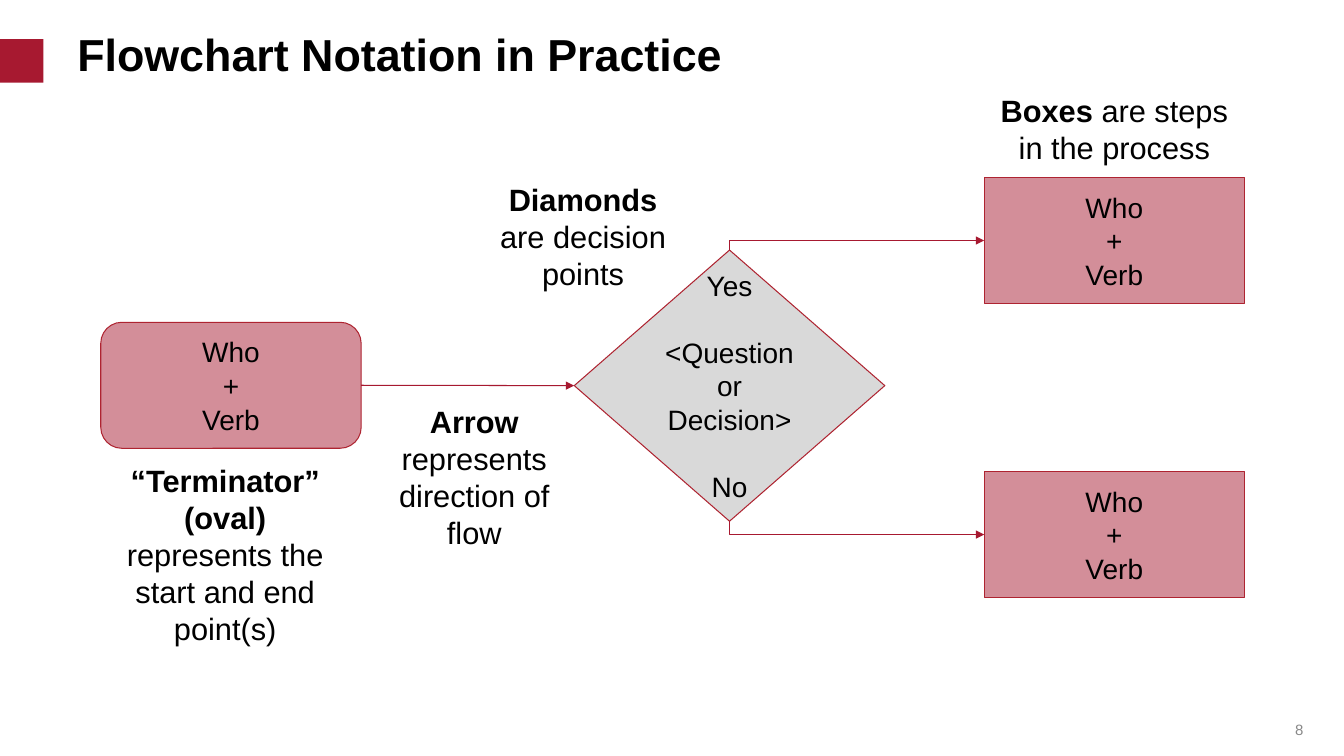
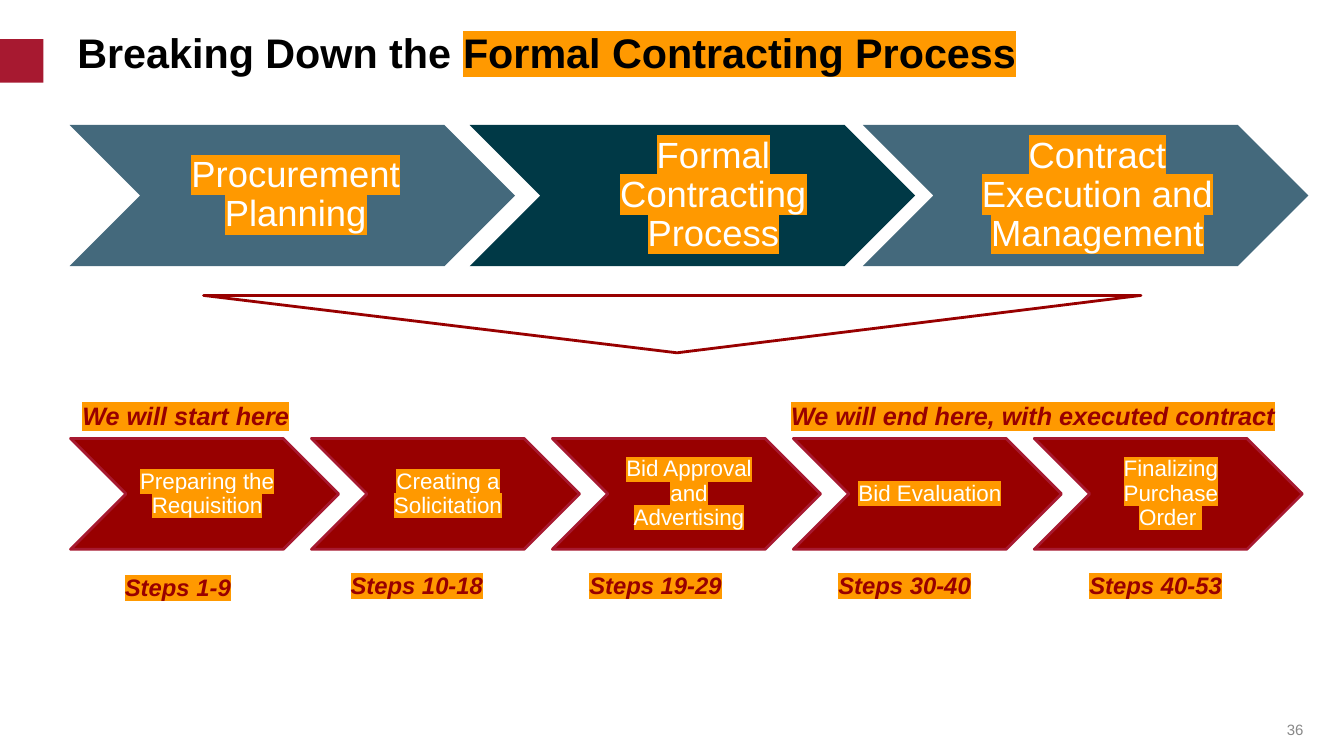
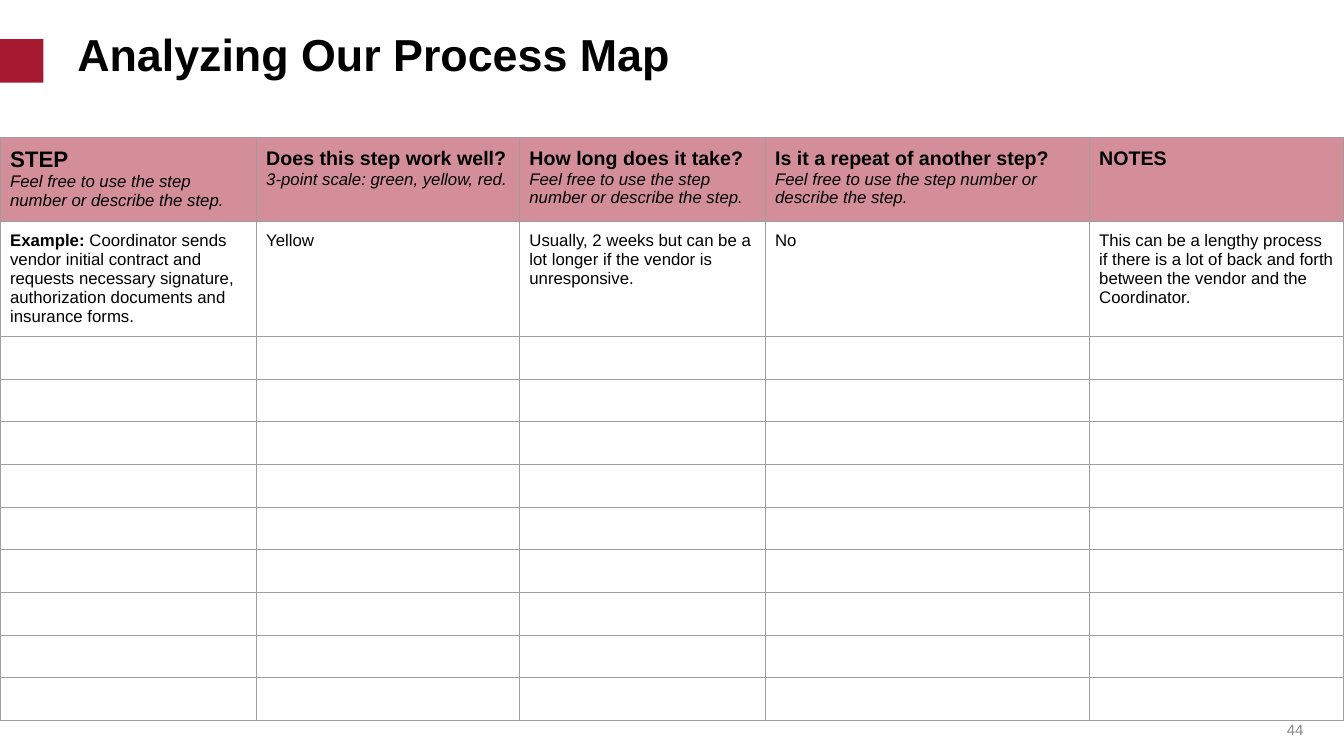
from lxml import etree
from pptx import Presentation
from pptx.dml.color import RGBColor
from pptx.enum.shapes import MSO_CONNECTOR as CONN, MSO_SHAPE as SHAPE
from pptx.enum.text import MSO_ANCHOR as ANCHOR, MSO_AUTO_SIZE as AUTO, PP_ALIGN as ALIGN
from pptx.oxml.ns import qn
from pptx.util import Pt

FONT = "Arial"
COLORS = {
    "crimson": "A71930", "outline": "AE2431", "maroon": "980000",
    "slate": "44697C", "teal": "003946", "orange": "FF9900",
    "gray": "D9D9D9", "grid": "9E9E9E", "number": "888888",
    "black": "000000", "white": "FFFFFF",
}
TINT = 49  # opacity of the pale crimson fills, in percent
LEFT_SITE, RIGHT_SITE, TOP_SITE, BOTTOM_SITE = 1, 3, 0, 2


# ---- text ----
def rgb(name):
    return RGBColor.from_string(COLORS[name])


def highlight(r, color):
    hl = etree.Element(qn("a:highlight"))
    etree.SubElement(hl, qn("a:srgbClr"), val=COLORS[color])
    r.font._element.find(qn("a:latin")).addprevious(hl)


def add_run(p, text, size, color="black", bold=False, italic=False, mark=None):
    r = p.add_run()
    r.text = text
    r.font.size = Pt(size)
    r.font.bold, r.font.italic = bold, italic
    r.font.color.rgb = rgb(color)
    r.font.name = FONT
    if mark:
        highlight(r, mark)


def add_paragraphs(tf, paragraphs, align=ALIGN.LEFT, spacing=None, gap=0, **style):
    """Each paragraph is a list of (text, style changes) runs."""
    for i, runs in enumerate(paragraphs):
        p = tf.paragraphs[0] if i == 0 else tf.add_paragraph()
        p.alignment = align
        if spacing:
            p.line_spacing = spacing
        if gap and i:
            p.space_before = Pt(gap)
        for text, changes in runs:
            add_run(p, text, **{**style, **changes})


def set_margins(target, left, top, right, bottom):
    target.margin_left, target.margin_top = Pt(left), Pt(top)
    target.margin_right, target.margin_bottom = Pt(right), Pt(bottom)


def add_text(slide, box, paragraphs, anchor=ANCHOR.TOP, **style):
    tf = slide.shapes.add_textbox(*map(Pt, box)).text_frame
    tf.word_wrap = True
    tf.vertical_anchor = anchor
    add_paragraphs(tf, paragraphs, **style)
    return tf


# ---- shapes ----
def set_opacity(props, percent):
    clr = props.find(qn("a:solidFill")).find(qn("a:srgbClr"))
    etree.SubElement(clr, qn("a:alpha"), val=str(percent * 1000))


def add_shape(slide, kind, box, fill, line=None, weight=0.75, opacity=None):
    sp = slide.shapes.add_shape(kind, *map(Pt, box))
    sp.shadow.inherit = False
    sp.fill.solid()
    sp.fill.fore_color.rgb = rgb(fill)
    if opacity:
        set_opacity(sp.element.spPr, opacity)
    if line:
        sp.line.color.rgb = rgb(line)
        sp.line.width = Pt(weight)
    else:
        sp.line.fill.background()
    sp.text_frame.word_wrap = True
    sp.text_frame.vertical_anchor = ANCHOR.MIDDLE
    return sp


def add_step(slide, kind, x, y):
    sp = add_shape(slide, kind, (x, y, 186, 90), "crimson", "outline", opacity=TINT)
    add_paragraphs(sp.text_frame, [[(t, {})] for t in ("Who", "+", "Verb")],
                   align=ALIGN.CENTER, size=20)
    return sp


def add_chevron(slide, box, fill, text, size, left, line=None):
    sp = add_shape(slide, SHAPE.CHEVRON, box, fill, line, 2)
    set_margins(sp.text_frame, left, 2, 0, 2)
    add_paragraphs(sp.text_frame, [[(text, {})]], align=ALIGN.CENTER, spacing=0.9,
                   size=size, color="white", mark="orange")


def add_arrow(slide, start, start_site, end, end_site, bent=False):
    kind = CONN.ELBOW if bent else CONN.STRAIGHT
    c = slide.shapes.add_connector(kind, 0, 0, 0, 0)
    c.begin_connect(start, start_site)
    c.end_connect(end, end_site)
    if bent:
        turn_corner(c)
    c.line.color.rgb = rgb("crimson")
    c.line.width = Pt(0.75)
    etree.SubElement(c.line._get_or_add_ln(), qn("a:tailEnd"), type="triangle")
    etree.SubElement(c.element.spPr, qn("a:effectLst"))


def turn_corner(c):
    """One-corner connector that leaves vertically: its frame is turned by 270 degrees."""
    dx, dy = c.end_x - c.begin_x, c.end_y - c.begin_y
    mid_x, mid_y = c.begin_x + dx // 2, c.begin_y + dy // 2
    c.begin_x, c.end_x = mid_x + dy // 2, mid_x - dy // 2
    c.begin_y, c.end_y = mid_y - dx // 2, mid_y + dx // 2
    props = c.element.spPr
    props.find(qn("a:xfrm")).set("rot", str(270 * 60000))
    props.find(qn("a:prstGeom")).set("prst", "bentConnector2")


# ---- table ----
def format_cell(cell, fill, opacity=None, top=7.2):
    set_margins(cell, 7.2, top, 7.2, 2)
    cell.fill.solid()
    cell.fill.fore_color.rgb = rgb(fill)
    props = cell._tc.get_or_add_tcPr()
    if opacity:
        set_opacity(props, opacity)
    for i, side in enumerate("LRTB"):
        ln = etree.Element(qn(f"a:ln{side}"), w=str(Pt(0.75)))
        line_fill = etree.SubElement(ln, qn("a:solidFill"))
        etree.SubElement(line_fill, qn("a:srgbClr"), val=COLORS["grid"])
        props.insert(i, ln)


# ---- shared slide parts ----
def set_up_layout(prs):
    layout = prs.slide_layouts[5]
    title = layout.placeholders[0]
    title.left, title.top, title.width, title.height = map(Pt, (48, 19.4, 864, 42.5))
    tf = title.text_frame
    set_margins(tf, 7.2, 0, 7.2, 3.6)
    tf.vertical_anchor = ANCHOR.TOP
    tf.auto_size = AUTO.NONE
    return layout


def move_to_layout(sp, layout):
    layout.shapes.element.append(sp.element)


def new_slide(prs, layout, title, size=32):
    slide = prs.slides.add_slide(layout)
    add_paragraphs(slide.shapes.title.text_frame, [title], size=size, bold=True)
    return slide


def add_number(slide, number):
    tf = add_text(slide, (882, 506.2, 54, 28.8), [[(str(number), {})]], ANCHOR.MIDDLE,
                  align=ALIGN.RIGHT, size=10.7, color="number")
    set_margins(tf, 5, 3.6, 5, 2.2)


# ---- slides ----
def build_flowchart(slide):
    diamond = add_shape(slide, SHAPE.DIAMOND, (410.2, 178.6, 221.8, 193.7), "gray", "outline")
    add_paragraphs(diamond.text_frame,
                   [[(t, {})] for t in ("Yes", "<Question or Decision>", "No")],
                   align=ALIGN.CENTER, gap=24, size=20)
    yes_step = add_step(slide, SHAPE.RECTANGLE, 703, 126.8)
    no_step = add_step(slide, SHAPE.RECTANGLE, 703, 336.8)
    terminator = add_step(slide, SHAPE.ROUNDED_RECTANGLE, 72, 230.2)

    add_arrow(slide, terminator, RIGHT_SITE, diamond, LEFT_SITE)
    add_arrow(slide, diamond, TOP_SITE, yes_step, LEFT_SITE, bent=True)
    add_arrow(slide, diamond, BOTTOM_SITE, no_step, LEFT_SITE, bent=True)

    bold = {"bold": True}
    captions = [
        ((75.6, 326.2, 170.6, 140.4), [[("“Terminator” (oval)", bold)],
                                       [("represents the start and end point(s)", {})]]),
        ((345.6, 125.3, 141.8, 87.1), [[("Diamonds ", bold), ("are decision points", {})]]),
        ((703, 62, 186, 60.5), [[("Boxes ", bold), ("are steps in the process", {})]]),
        ((272.9, 284.4, 131.8, 113.8), [[("Arrow", bold)],
                                        [("represents direction of flow", {})]]),
    ]
    for box, paragraphs in captions:
        add_text(slide, box, paragraphs, align=ALIGN.CENTER, size=22)


def build_breakdown(slide):
    pointer = add_shape(slide, SHAPE.ISOSCELES_TRIANGLE, (145.4, 211, 669.6, 41),
                        "white", "maroon", 2)
    pointer.adjustments[0] = 0.495
    pointer.rotation = 180

    # Phases: left edge, fill, left text margin, text
    for x, fill, left, text in [
        (49.7, "slate", 5, "Procurement Planning"),
        (335.5, "teal", 30, "Formal Contracting Process"),
        (616.3, "slate", 17, "Contract Execution and Management"),
    ]:
        add_chevron(slide, (x, 89.3, 318.2, 100.8), fill, text, 26, left)

    # Stages: text, then step range with its left, top and width
    label = {"color": "maroon", "bold": True, "italic": True, "mark": "orange"}
    stages = [
        ("Preparing the Requisition", "Steps 1-9", 50.4, 405.4, 153.4),
        ("Creating a Solicitation", "Steps 10-18", 215.3, 403.9, 164.9),
        ("Bid Approval and Advertising", "Steps 19-29", 379.4, 403.9, 177.8),
        ("Bid Evaluation", "Steps 30-40", 557.3, 403.9, 177.8),
        ("Finalizing Purchase Order ", "Steps 40-53", 736.6, 403.9, 177.8),
    ]
    for i, (text, steps, x, y, width) in enumerate(stages):
        add_chevron(slide, (50.4 + 172.1 * i, 313.2, 191.5, 79.2), "maroon", text, 16, 3.6,
                    "crimson")
        add_text(slide, (x, y, width, 28), [[(steps, {})]], align=ALIGN.CENTER, size=17, **label)

    for x, y, width, text in [
        (558, 282.2, 379.4, "We will end here, with executed contract"),
        (51.8, 282.2, 163.4, "We will start here"),
    ]:
        add_text(slide, (x, y, width, 28.8), [[(text, {})]], size=18, **label)


def build_analysis(slide):
    hint = "Feel free to use the step number or describe the step."
    header = [
        ("STEP", 16, hint),
        ("Does this step work well?", 14, "3-point scale: green, yellow, red."),
        ("How long does it take?", 14, hint),
        ("Is it a repeat of another step?", 14, hint),
        ("NOTES", 14, None),
    ]
    example = [
        [("Example: ", {"bold": True}),
         ("Coordinator sends vendor initial contract and requests necessary signature, "
          "authorization documents and insurance forms.", {})],
        [("Yellow", {})],
        [("Usually, 2 weeks but can be a lot longer if the vendor is unresponsive.", {})],
        [("No", {})],
        [("This can be a lengthy process if there is a lot of back and forth "
          "between the vendor and the Coordinator.", {})],
    ]
    widths = [183, 188, 175.5, 231.5, 182]
    heights = [60, 82] + [30.5] * 9
    frame = slide.shapes.add_table(len(heights), len(widths), 0, Pt(98.3),
                                   Pt(sum(widths)), Pt(sum(heights)))
    table = frame.table
    table.first_row = table.horz_banding = False
    for column, width in zip(table.columns, widths):
        column.width = Pt(width)
    for row, height in zip(table.rows, heights):
        row.height = Pt(height)

    for i, (question, size, note) in enumerate(header):
        paragraphs = [[(question, {"size": size, "bold": True})]]
        if note:
            paragraphs.append([(note, {"italic": True})])
        add_paragraphs(table.cell(0, i).text_frame, paragraphs, size=12)
        format_cell(table.cell(0, i), "crimson", TINT)
        add_paragraphs(table.cell(1, i).text_frame, [example[i]], size=12)
        format_cell(table.cell(1, i), "white")
        for row in range(2, len(heights)):
            format_cell(table.cell(row, i), "white", top=2)


def main():
    prs = Presentation()
    prs.slide_width, prs.slide_height = Pt(960), Pt(540)
    layout = set_up_layout(prs)

    flowchart = new_slide(prs, layout, [("Flowchart Notation in Practice", {})])
    marker = add_shape(flowchart, SHAPE.RECTANGLE, (0, 28, 31, 31), "crimson")
    move_to_layout(marker, layout)
    build_flowchart(flowchart)

    title = [("Breaking Down the ", {}), ("Formal Contracting Process", {"mark": "orange"})]
    breakdown = new_slide(prs, layout, title, 29.5)
    build_breakdown(breakdown)

    analysis = new_slide(prs, layout, [("Analyzing Our Process Map", {})])
    build_analysis(analysis)

    # Page numbers go on last, in front of everything else
    for slide, number in ((flowchart, 8), (breakdown, 36), (analysis, 44)):
        add_number(slide, number)
    prs.save("out.pptx")


if __name__ == "__main__":
    main()
